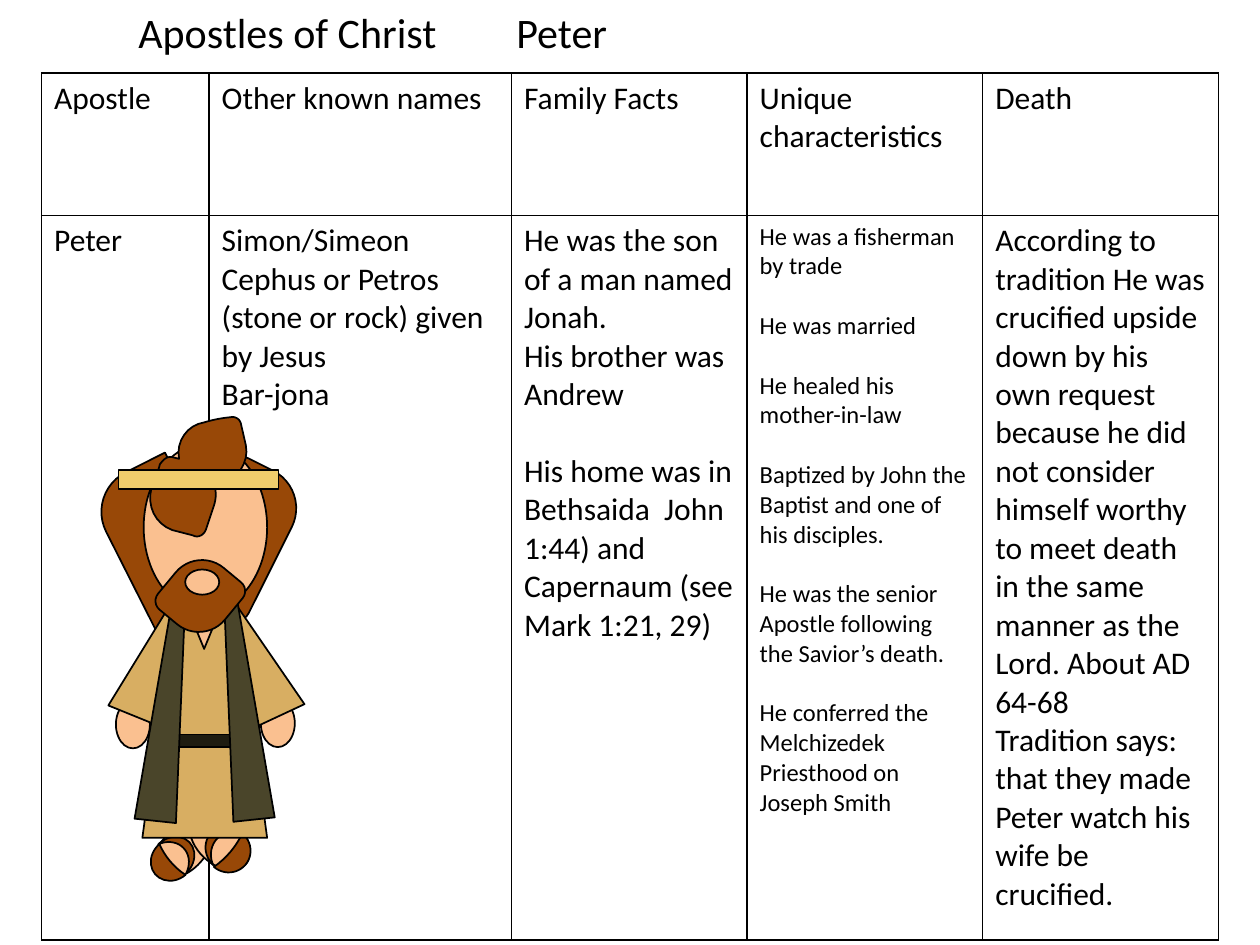
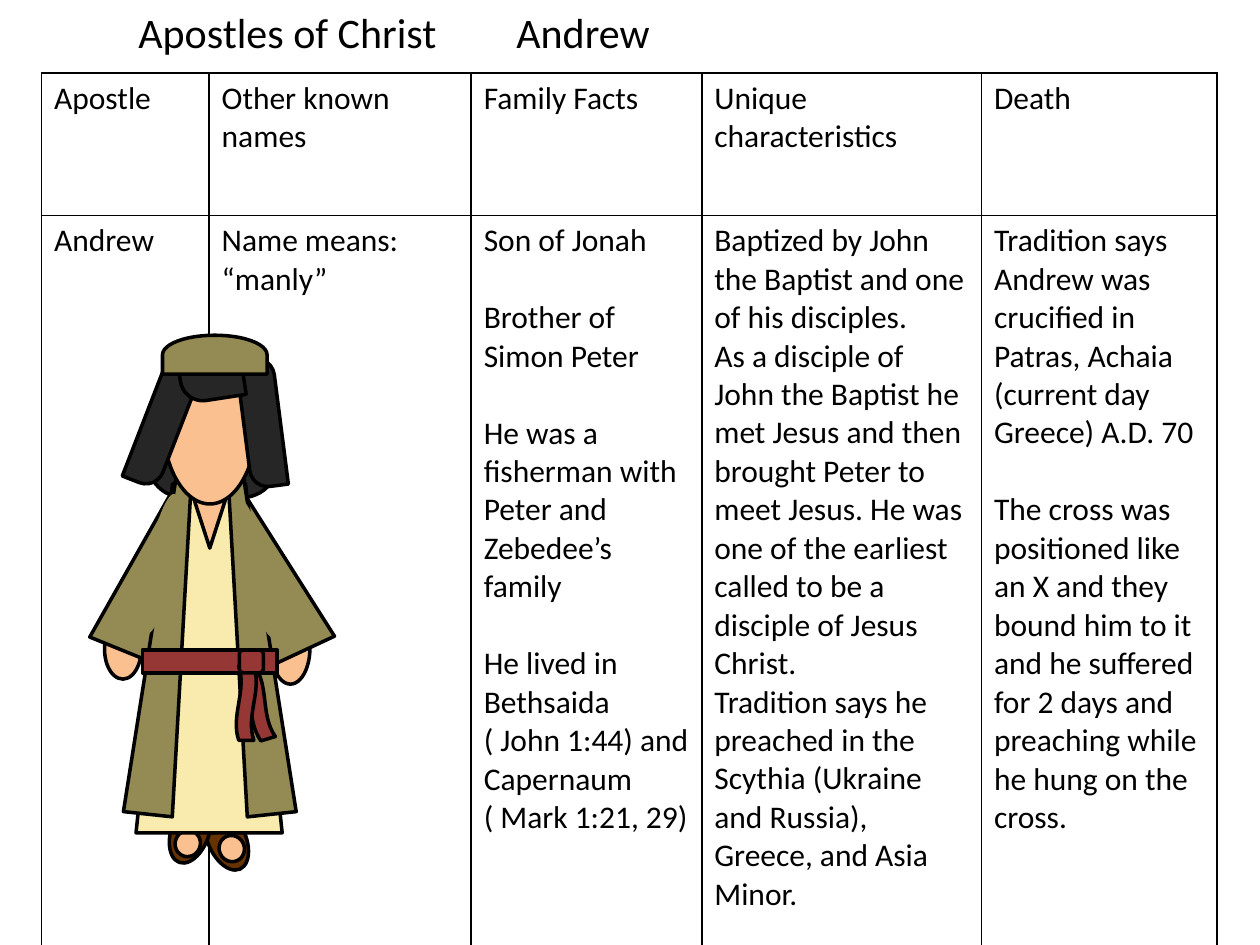
from dataclasses import dataclass
from lxml.etree import SubElement
from pptx import Presentation
from pptx.dml.color import RGBColor
from pptx.enum.shapes import MSO_SHAPE as S
from pptx.enum.text import MSO_AUTO_SIZE
from pptx.oxml.ns import qn
from pptx.util import Inches, Pt


# Theme: colours, font and type sizes
@dataclass(frozen=True)
class Theme:
    font: str = "Calibri"
    title: int = 24
    body: int = 18
    small: int = 14
    lead: float = 1.22
    ink: str = "000000"
    skin: str = "FAC090"
    brown: str = "984807"
    tan: str = "D8AE62"
    gold: str = "F0CD6C"
    belt: str = "1E1C11"
    stole: str = "4A452A"
    shoe: str = "663300"
    black: str = "262626"
    olive: str = "948A54"
    cream: str = "F9EBAD"
    red: str = "953735"


T = Theme()

# Grid: 100 columns by 75 rows
WIDE, HIGH = Inches(10), Inches(7.5)
COL, ROW = WIDE / 100, HIGH / 75


def box(x, y, w, h):
    """Turn grid columns and rows into slide lengths."""
    return round(x * COL), round(y * ROW), round(w * COL), round(h * ROW)


def style(para, size):
    para.font.name = T.font
    para.font.size = Pt(size)
    para.font.color.rgb = RGBColor.from_string(T.ink)


HEADS = ["Apostle", "Other known names", "Family Facts",
         "Unique characteristics", "Death"]

# Hair outline: a point is a line, three points are a curve
HAIR = [
    [(14.8, 34.5)],
    [(15.2, 34.5), (15.5, 34.7), (15.6, 35)],
    [(15.8, 35.4)],
    [(16.7, 34.3), (18.3, 34.2), (19.3, 35.1)],
    [(19.9, 35.5), (20.4, 35.9), (20.9, 36.4)],
    [(21.3, 36.7), (21.3, 37.2), (21, 37.5)],
    [(20, 38.8)],
    [(19.1, 39.9), (17.5, 40), (16.4, 39.2)],
    [(16, 38.8)],
    [(15.9, 39)],
    [(15.6, 39.4), (15.2, 39.7), (14.7, 39.9)],
    [(12.9, 40.6)],
    [(12.4, 40.8), (11.9, 40.6), (11.8, 40.1)],
    [(11.1, 38.6)],
    [(10.6, 37.2), (11.3, 35.8), (12.6, 35.2)],
    [(13.2, 35), (13.9, 34.8), (14.5, 34.5)],
    [(14.6, 34.5), (14.7, 34.5), (14.8, 34.5)],
]

LEAF, OVAL, TRAP = S.ROUND_2_DIAG_RECTANGLE, S.OVAL, S.TRAPEZOID
FOLD = (0.341,)

# Parts of each figure: kind, left, top, width, height, turn, fill, adjust, flip
PETER = [
    (LEAF, 15.6, 36.7, 6.7, 12.1, 206.6, T.brown, (0.167, 0.5), ""),
    (LEAF, 9.4, 36.8, 7, 13, 333.2, T.brown, (0, 0.5), "flipH"),
    (OVAL, 11.4, 35.2, 9.8, 13.3, 0, T.skin, (), ""),
    # Feet
    (OVAL, 12.8, 64.7, 3.4, 5.5, 45.9, T.skin, (), ""),
    (S.MOON, 12.1, 67.2, 1.8, 3.2, 319.7, T.brown, (0.875,), ""),
    (S.MOON, 13.4, 65.9, 1.9, 3.2, 135.9, T.brown, (0.344,), ""),
    (OVAL, 15.6, 63.9, 3.7, 5.6, 314.1, T.skin, (), "flipH"),
    (S.MOON, 17.9, 66.3, 1.8, 3.5, 40.3, T.brown, (0.875,), "flipH"),
    (S.MOON, 16.5, 65, 1.9, 3.5, 224.1, T.brown, (0.344,), "flipH"),
    # Hands, sleeves and robe
    (OVAL, 20.7, 55.5, 2.7, 3.8, 0, T.skin, (), ""),
    (OVAL, 9.2, 55.6, 2.7, 3.8, 0, T.skin, (), ""),
    (TRAP, 17.8, 47.9, 4.6, 9.4, 335, T.tan, FOLD, ""),
    (TRAP, 10.2, 47.8, 4.6, 9.4, 22.1, T.tan, FOLD, ""),
    (TRAP, 11.3, 48.1, 9.9, 18.4, 0, T.tan, (), ""),
    (S.ISOSCELES_TRIANGLE, 14.8, 48.1, 2.8, 3.4, 180, T.skin, (), ""),
    (S.RECTANGLE, 12.7, 58.3, 7.1, 1, 0, T.belt, (), ""),
    (TRAP, 11.6, 47.9, 3.3, 17.3, 6.1, T.stole, FOLD, "flipH"),
    (TRAP, 17.6, 47.8, 3.3, 17.3, 353.9, T.stole, FOLD, ""),
    # Beard, mouth, hair and headband
    (LEAF, 13, 44.6, 5.8, 5.4, 309.6, T.brown, (0.167, 0.5), ""),
    (OVAL, 14.7, 45.2, 2.7, 2, 0, T.skin, (), ""),
    ("hair", 11.1, 33.5, 8.8, 8.3, 309.6, T.brown, (), ""),
    (S.RECTANGLE, 9.4, 37.3, 12.7, 1.5, 0, T.gold, (), ""),
]
ANDREW = [
    # Feet
    (OVAL, 16.5, 64, 3, 5.2, 336.1, T.shoe, (), ""),
    (OVAL, 17.4, 66.3, 2, 2.1, 336.1, T.skin, (), ""),
    (OVAL, 15.8, 64.1, 2.9, 1.9, 336.1, T.skin, (), ""),
    (OVAL, 13.6, 63.4, 3, 5.2, 19.6, T.shoe, (), ""),
    (OVAL, 13.9, 65.9, 2, 2.1, 19.6, T.skin, (), ""),
    (OVAL, 14, 63.4, 2.9, 1.9, 19.6, T.skin, (), ""),
    # Back hair, hands, sleeves and robe
    (S.ROUNDED_RECTANGLE, 11.7, 30.3, 10.4, 9.2, 0, T.black, (0.32,), ""),
    (OVAL, 21.5, 48.6, 3.1, 5.7, 0, T.skin, (), ""),
    (OVAL, 8.3, 49.2, 2.9, 4.7, 0, T.skin, (), ""),
    (TRAP, 18.4, 38.1, 5.4, 14.2, 335, T.olive, FOLD, ""),
    (TRAP, 9.6, 37.9, 5.4, 14.2, 22.1, T.olive, FOLD, ""),
    (TRAP, 10.8, 38.4, 11.6, 27.7, 0, T.cream, (), ""),
    (S.ISOSCELES_TRIANGLE, 15, 38.4, 3.3, 5.1, 180, T.skin, (), ""),
    (TRAP, 11.2, 38.1, 3.9, 26.6, 6.1, T.olive, FOLD, "flipH"),
    (TRAP, 18.2, 38, 3.9, 26.7, 353.9, T.olive, FOLD, ""),
    ("seam", 11.7, 39.1, 2.1, 11.3, 11, T.olive, (), ""),
    ("seam", 19.3, 39.4, 2.1, 11.4, 346, T.olive, (), ""),
    # Face, hair and cap
    (OVAL, 12.9, 26.7, 7.5, 13.3, 0, T.skin, (), ""),
    (LEAF, 7.8, 32.1, 10.2, 2.9, 291.2, T.black, (0, 0.5), ""),
    (LEAF, 15.7, 32.1, 10.2, 2.9, 262.7, T.black, (0, 0.5), "flipV"),
    (LEAF, 14.3, 28.1, 5, 3.6, 351.3, T.black, (0, 0.5), ""),
    (S.FLOWCHART_DELAY, 15.5, 24, 3.1, 8.3, 270, T.olive, (), ""),
    # Sash
    (S.RECTANGLE, 11.3, 51.6, 10.7, 1.8, 0, T.red, (), ""),
    (S.WAVE, 17.5, 55, 5.9, 1.6, 253.5, T.red, (), ""),
    (S.WAVE, 16.6, 55, 5.9, 1.6, 270, T.red, (), ""),
    (S.ROUNDED_RECTANGLE, 19, 51.6, 1.9, 1.8, 0, T.red, (), ""),
]

# Pages: name, column widths, lower row, facts, their sizes, figure, outline
PAGES = [
    ("Peter", [13.3, 24, 18.7, 18.7, 18.7], 57.5, [
        "Simon/Simeon\nCephus or Petros (stone or rock) given by Jesus\nBar-jona",
        "He was the son of a man named Jonah.\nHis brother was Andrew\n\n"
        "His home was in Bethsaida  John 1:44) and Capernaum "
        "(see Mark 1:21, 29)",
        "He was a fisherman by trade\n\nHe was married\n\n"
        "He healed his mother-in-law\n\n"
        "Baptized by John the Baptist and one of his disciples.\n\n"
        "He was the senior Apostle following the Savior’s death.\n\n"
        "He conferred the Melchizedek Priesthood on Joseph Smith",
        "According to tradition He was crucified upside down by his own "
        "request because he did not consider himself worthy to meet death in "
        "the same manner as the Lord. About AD 64-68\n"
        "Tradition says: that they made Peter watch his wife be crucified.",
    ], [T.body, T.body, T.body, T.small, T.body], PETER, 1),
    ("Andrew", [13.3, 20.8, 18.3, 22.2, 18.7], 58, [
        "Name means: “manly”",
        "Son of Jonah\n\nBrother of Simon Peter\n\n"
        "He was a fisherman with Peter and Zebedee’s family\n\n"
        "He lived in Bethsaida ( John 1:44) and Capernaum ( Mark 1:21, 29)",
        "Baptized by John the Baptist and one of his disciples.\n"
        "As a disciple of John the Baptist he met Jesus and then brought "
        "Peter to meet Jesus. He was one of the earliest called to be a "
        "disciple of Jesus Christ.\n"
        "Tradition says he preached in the Scythia (Ukraine and Russia), "
        "Greece, and Asia Minor.",
        "Tradition says Andrew was crucified in Patras, Achaia (current day "
        "Greece) A.D. 70\n\n"
        "The cross was positioned like an X and they bound him to it and he "
        "suffered for 2 days and preaching while he hung on the cross.",
    ], [T.body] * 5, ANDREW, 2),
]

deck = Presentation()
deck.slide_width, deck.slide_height = WIDE, HIGH

for name, cols, low, facts, sizes, parts, line in PAGES:
    slide = deck.slides.add_slide(deck.slide_layouts[6])

    # Table
    rows = [11.3, low]
    place = box(3.3, 5.8, sum(cols), sum(rows))
    table = slide.shapes.add_table(2, len(cols), *place).table
    table.first_row = table.horz_banding = False
    for i, wide in enumerate(cols):
        table.columns[i].width = round(wide * COL)
    for i, high in enumerate(rows):
        table.rows[i].height = round(high * ROW)
    words = [(text, T.body) for text in HEADS] + list(zip([name] + facts, sizes))
    for cell, (text, size) in zip(table.iter_cells(), words):
        frame = cell.text_frame
        frame.text = text.replace("\n\n", "\n")
        starts = [i for i, part in enumerate(text.split("\n\n"))
                  for _ in part.split("\n")]
        for i, para in enumerate(frame.paragraphs):
            style(para, size)
            if i and starts[i] != starts[i - 1]:
                para.space_before = Pt(round(size * T.lead))
        props = cell._tc.get_or_add_tcPr()
        for side in ("a:lnL", "a:lnR", "a:lnT", "a:lnB"):
            edge = SubElement(props, qn(side), w=str(Pt(1)))
            fill = SubElement(edge, qn("a:solidFill"))
            SubElement(fill, qn("a:srgbClr"), val=T.ink)
        cell.fill.background()

    # Title
    frame = slide.shapes.add_textbox(*box(10, 0, 72.5, 5)).text_frame
    frame.word_wrap = True
    frame.auto_size = MSO_AUTO_SIZE.SHAPE_TO_FIT_TEXT
    frame.text = f"Apostles of Christ\t\t{name}"
    style(frame.paragraphs[0], T.title)

    # Figure
    group = slide.shapes.add_group_shape().shapes
    for kind, x, y, w, h, turn, fill, adjust, flip in parts:
        if kind == "hair":
            dots = [HAIR[0][0]]
            for step in HAIR[1:]:
                if len(step) == 1:
                    dots += step
                    continue
                curve = [dots[-1]] + step
                for t in (k / 8 for k in range(1, 9)):
                    mix = ((1 - t) ** 3, 3 * t * (1 - t) ** 2,
                           3 * t * t * (1 - t), t ** 3)
                    dots.append(tuple(sum(m * p[axis] for m, p in zip(mix, curve))
                                      for axis in (0, 1)))
            dots = [(a * COL, b * ROW) for a, b in dots]
            pen = group.build_freeform(*dots[0], scale=1.0)
            pen.add_line_segments(dots[1:], close=True)
            shape = pen.convert_to_shape()
        else:
            shape = group.add_shape(OVAL if kind == "seam" else kind, *box(x, y, w, h))
        shape.shadow.inherit = False
        shape.rotation = turn
        for i, value in enumerate(adjust):
            shape.adjustments[i] = value
        if flip:
            shape.element.spPr.get_or_add_xfrm().set(flip, "1")
        shape.fill.solid()
        shape.fill.fore_color.rgb = RGBColor.from_string(fill)
        if kind == "seam":
            shape.line.fill.background()
        else:
            shape.line.color.rgb = RGBColor.from_string(T.ink)
            shape.line.width = Pt(line)

deck.save("out.pptx")
